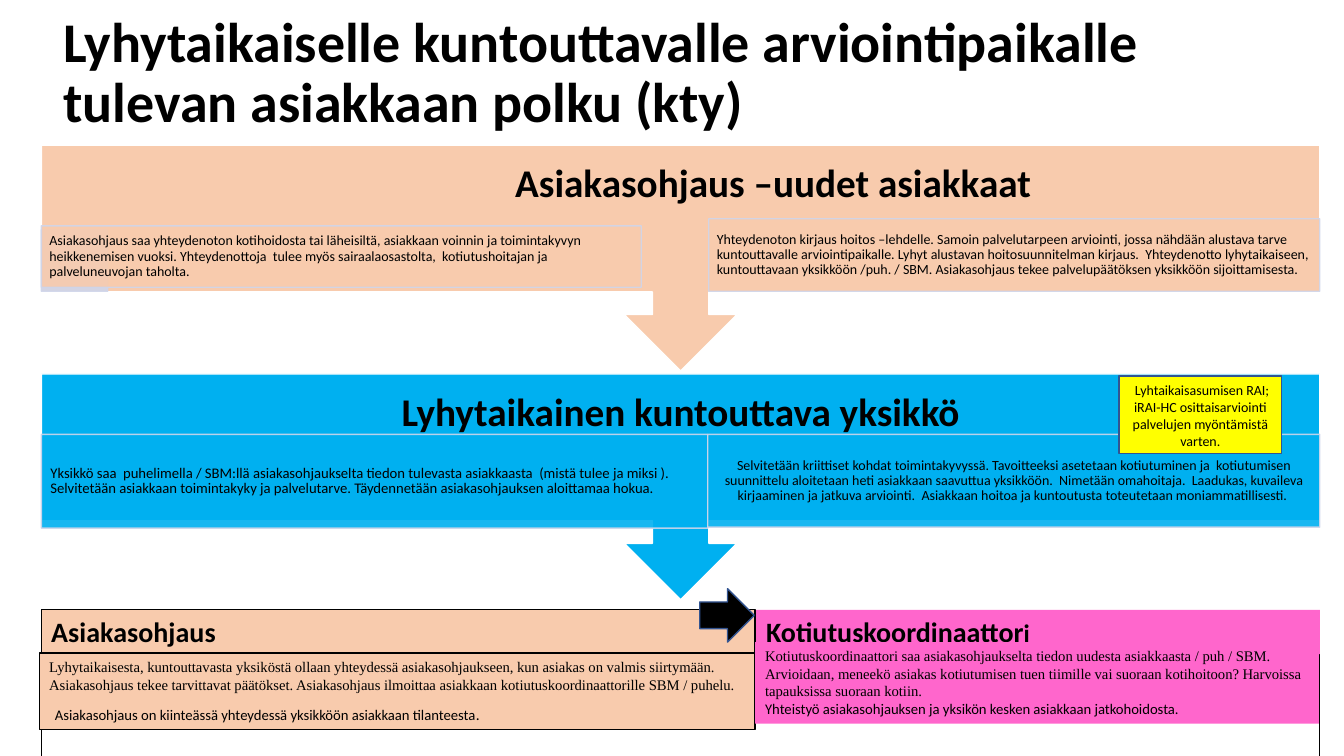
from pptx import Presentation
from pptx import util as u
from pptx.dml import color
from pptx.enum import shapes, text
from pptx.oxml import parse_xml
from pptx.oxml import ns

INK = {
    "black": "000000", "white": "FFFFFF", "peach": "F8CBAD", "blue": "00B0F0",
    "pink": "FF66CC", "yellow": "FFFF00", "navy": "325491", "pale": "CFD5EA",
}
RECT = shapes.MSO_SHAPE.RECTANGLE
TOP, MID = text.MSO_ANCHOR.TOP, text.MSO_ANCHOR.MIDDLE
LEFT, MIDDLE = text.PP_ALIGN.LEFT, text.PP_ALIGN.CENTER
SLIM = (0.08, 0.01)
WIDE = (0.22, 0.22)
BODY = "Times New Roman"


def rgb(name):
    return color.RGBColor.from_string(INK[name])


def fade(part):
    """Make a solid fill or line 90 % opaque."""
    for tint in part.findall(ns.qn("a:solidFill") + "/" + ns.qn("a:srgbClr")):
        tint.append(parse_xml(f'<a:alpha {ns.nsdecls("a")} val="90000"/>'))


def block(slide, at, fill=None, line=None, kind=RECT, clear=False):
    box = slide.shapes.add_shape(kind, *map(u.Inches, at))
    box.shadow.inherit = False
    if fill:
        box.fill.solid()
        box.fill.fore_color.rgb = rgb(fill)
    else:
        box.fill.background()
    if line:
        box.line.color.rgb = rgb(line)
        box.line.width = u.Pt(1)
    else:
        box.line.fill.background()
    if clear:
        props = box.fill._xPr
        fade(props)
        fade(props.find(ns.qn("a:ln")))
    return box


def write(box, paras, anchor=MID, align=LEFT, inset=(0.1, 0.05), space=None):
    """Each paragraph is a list of runs: (words, size, bold, font)."""
    frame = box.text_frame
    frame.word_wrap = True
    frame.vertical_anchor = anchor
    frame.margin_left = frame.margin_right = u.Inches(inset[0])
    frame.margin_top = frame.margin_bottom = u.Inches(inset[1])
    for i, runs in enumerate(paras):
        para = frame.paragraphs[0] if i == 0 else frame.add_paragraph()
        para.alignment = align
        if space:
            para.line_spacing = space
        for words, size, bold, font in runs:
            run = para.add_run()
            run.text = words
            run.font.size = u.Pt(size)
            run.font.bold = bold
            run.font.name = font
            run.font.color.rgb = rgb("black")
    return frame


def plain(words, size=10, font="Calibri"):
    return words, size, False, font


def bold(words, size):
    return words, size, True, "Calibri"


def stage(slide, top, fill, head, align=MIDDLE, shift=0):
    """A wide callout pointing down, with its heading."""
    arrow = block(slide, (0.41, top, 12.68, 2.24), fill, "white",
                  shapes.MSO_SHAPE.UP_ARROW_CALLOUT)
    arrow.rotation = 180
    area = map(u.Inches, (0.41 + shift, top, 12.68 - shift, 0.79))
    write(slide.shapes.add_textbox(*area), [[bold(head, 28)]],
          align=align, inset=WIDE, space=0.9)


def detail(slide, at, fill, words, size=10, align=LEFT, inset=SLIM):
    box = block(slide, at, fill, "pale", clear=True)
    write(box, [[plain(words, size)]], align=align, inset=inset, space=0.9)


def panel(slide, at, fill, line, paras):
    box = block(slide, at, fill, line)
    frame = write(box, paras, TOP)
    frame.auto_size = text.MSO_AUTO_SIZE.SHAPE_TO_FIT_TEXT
    return frame


def main():
    deck = Presentation()
    deck.slide_width, deck.slide_height = u.Inches(13.33), u.Inches(7.5)
    slide = deck.slides.add_slide(deck.slide_layouts[5])

    # Title
    title = slide.shapes.title
    title.left, title.top = u.Inches(0.53), u.Inches(0.09)
    title.width, title.height = u.Inches(11.5), u.Inches(0.82)
    frame = write(title, [[bold("Lyhytaikaiselle kuntouttavalle arviointipaikalle "
                                "tulevan asiakkaan polku (kty)", 40)]], TOP, space=0.9)
    frame.auto_size = text.MSO_AUTO_SIZE.NONE

    # Frames behind the last stage
    block(slide, (0.41, 5.91, 12.68, 1.46), line="white")
    block(slide, (0.41, 6.38, 12.68, 1.2), line="black")

    # Short-term unit
    stage(slide, 3.71, "blue", "Lyhytaikainen kuntouttava yksikkö")
    detail(slide, (0.41, 4.31, 6.61, 0.93), "blue",
           "Yksikkö saa  puhelimella / SBM:llä asiakasohjaukselta tiedon tulevasta "
           "asiakkaasta  (mistä tulee ja miksi ). Selvitetään asiakkaan toimintakyky ja "
           "palvelutarve. Täydennetään asiakasohjauksen aloittamaa hokua.",
           10.5, inset=(0.09, 0.02))
    detail(slide, (7.02, 4.31, 6.07, 0.92), "blue",
           "Selvitetään kriittiset kohdat toimintakyvyssä. Tavoitteeksi asetetaan "
           "kotiutuminen ja  kotiutumisen suunnittelu aloitetaan heti asiakkaan saavuttua "
           "yksikköön.  Nimetään omahoitaja.  Laadukas, kuvaileva kirjaaminen ja jatkuva "
           "arviointi.  Asiakkaan hoitoa ja kuntoutusta toteutetaan moniammatillisesti. ",
           align=MIDDLE)

    # New clients
    stage(slide, 1.44, "peach", "Asiakasohjaus –uudet asiakkaat", LEFT, 4.48)
    block(slide, (0.41, 2.28, 0.66, 0.61), "pale", "pale", clear=True)
    detail(slide, (0.41, 2.24, 5.95, 0.61), "peach",
           "Asiakasohjaus saa yhteydenoton kotihoidosta tai läheisiltä, asiakkaan voinnin "
           "ja toimintakyvyn heikkenemisen vuoksi. Yhteydenottoja  tulee myös "
           "sairaalaosastolta,  kotiutushoitajan ja palveluneuvojan taholta.")
    detail(slide, (7.03, 2.17, 6.06, 0.72), "peach",
           "Yhteydenoton kirjaus hoitos –lehdelle. Samoin palvelutarpeen arviointi, jossa "
           "nähdään alustava tarve kuntouttavalle arviointipaikalle. Lyhyt alustavan "
           "hoitosuunnitelman kirjaus.  Yhteydenotto lyhytaikaiseen, kuntouttavaan "
           "yksikköön /puh. / SBM. Asiakasohjaus tekee palvelupäätöksen yksikköön "
           "sijoittamisesta.")

    # Note on the assessment
    note = block(slide, (11.1, 3.73, 1.61, 0.77), "yellow", "navy")
    write(note, [[plain(" ", 11), plain("Lyhtaikaisasumisen RAI; iRAI-HC osittaisarviointi "
                                        "palvelujen myöntämistä varten.")]], align=MIDDLE)

    # Last stage: guidance hands over to the coordinator
    panel(slide, (0.41, 6.05, 7.08, 0.44), "peach", "black", [[bold("Asiakasohjaus", 20)]])
    panel(slide, (7.5, 6.05, 5.59, 0.44), "pink", None,
          [[bold("Kotiutuskoordinaattor", 20), bold("i", 18)]])
    block(slide, (6.94, 5.84, 0.54, 0.53), "black", "navy", shapes.MSO_SHAPE.RIGHT_ARROW)
    frame = panel(slide, (0.39, 6.48, 7.1, 0.76), "peach", "black", [
        [plain("Lyhytaikaisesta, kuntouttavasta yksiköstä ollaan yhteydessä "
               "asiakasohjaukseen, kun asiakas on valmis siirtymään. Asiakasohjaus tekee "
               "tarvittavat päätökset. Asiakasohjaus ilmoittaa asiakkaan "
               "kotiutuskoordinaattorille SBM / puhelu.", 10.5, BODY)],
        [plain(" ", 18),
         plain("Asiakasohjaus on kiinteässä yhteydessä yksikköön asiakkaan tilanteesta", 10.5),
         plain(".", 11)]])
    frame.paragraphs[1].line_spacing = 1.07
    frame.paragraphs[1].space_after = u.Pt(8)
    panel(slide, (7.49, 6.37, 5.59, 0.81), "pink", None, [
        [plain("Kotiutuskoordinaattori saa asiakasohjaukselta tiedon uudesta asiakkaasta / "
               "puh / SBM. Arvioidaan, meneekö asiakas kotiutumisen tuen tiimille vai "
               "suoraan kotihoitoon? Harvoissa tapauksissa suoraan kotiin.", 10.5, BODY)],
        [plain("Yhteistyö asiakasohjauksen ja yksikön kesken asiakkaan jatkohoidosta.",
               10.5)]])

    deck.save("out.pptx")


if __name__ == "__main__":
    main()
